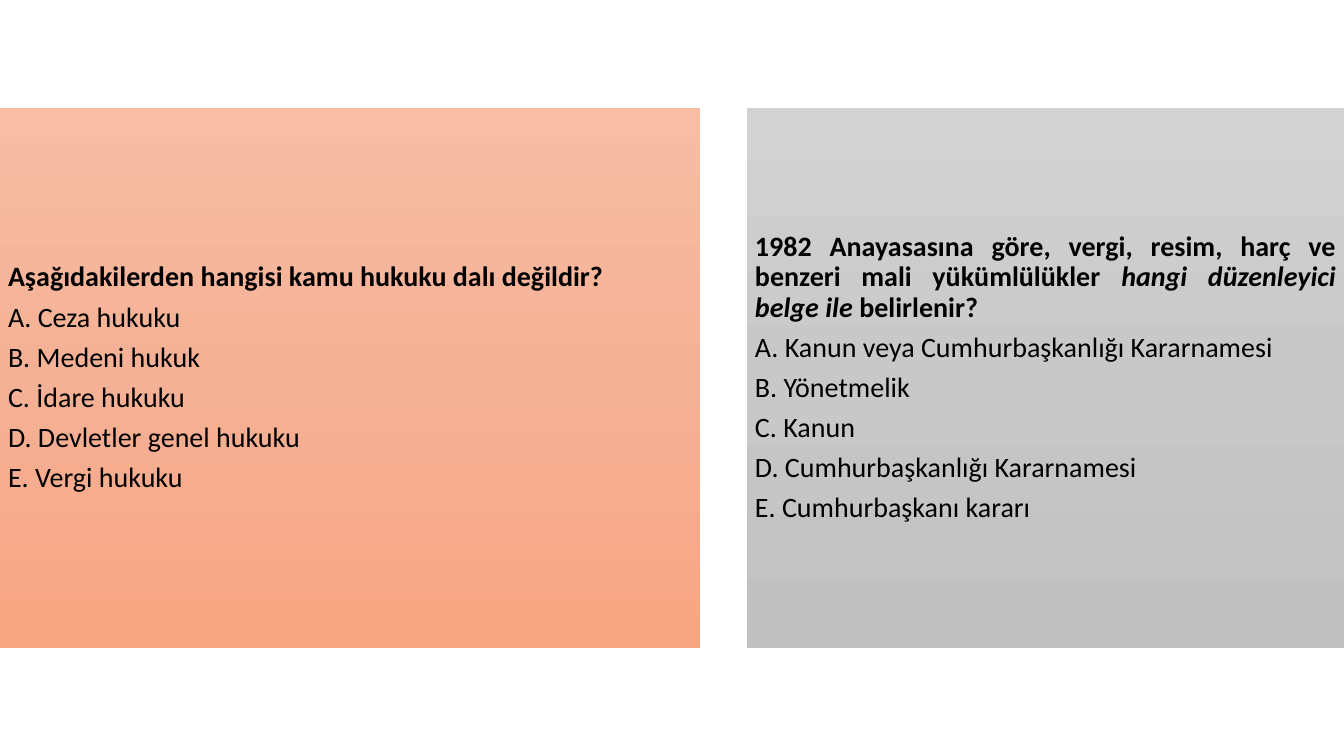
from copy import deepcopy

from pptx import Presentation
from pptx.dml.color import RGBColor
from pptx.enum.shapes import MSO_SHAPE as Shape
from pptx.enum.text import MSO_ANCHOR as Anchor, PP_ALIGN as Align
from pptx.util import Pt

EMU_PER_PX = 914400 / 100.8
WIDTH, HEIGHT = 1344, 756
PANEL_TOP, PANEL_HEIGHT = 108, 540

COLOURS = {
    "text": "000000",
    "orange": ["F7BDA5", "F5B196", "F8A582"],
    "grey": ["D2D2D2", "C8C8C8", "C0C0C0"],
}

# Each question: left, width, gradient, question runs (text, italic), answers
QUESTIONS = [
    (0, 700, "orange",
     [("Aşağıdakilerden hangisi kamu hukuku dalı değildir?", False)],
     ["Ceza hukuku", "Medeni hukuk", "İdare hukuku",
      "Devletler genel hukuku", "Vergi hukuku"]),
    (747, 597, "grey",
     [("1982 Anayasasına göre, vergi, resim, harç ve benzeri mali yükümlülükler ", False),
      ("hangi düzenleyici belge ile", True),
      (" belirlenir?", False)],
     ["Kanun veya Cumhurbaşkanlığı Kararnamesi", "Yönetmelik", "Kanun",
      "Cumhurbaşkanlığı Kararnamesi", "Cumhurbaşkanı kararı"]),
]


def px(length):
    return round(length * EMU_PER_PX)


def apply(target, values):
    for name, value in values.items():
        setattr(target, name, value)


class QuizSlide:
    FONT = {"name": "Calibri", "size": Pt(20)}
    PARAGRAPH = {"alignment": Align.JUSTIFY, "line_spacing": 0.9, "space_after": Pt(7)}
    FRAME = {"word_wrap": True, "vertical_anchor": Anchor.MIDDLE}
    FRAME.update({f"margin_{side}": px(8) for side in ("left", "top", "right", "bottom")})

    def __init__(self, deck):
        self.slide = deck.slides.add_slide(deck.slide_layouts[6])

    def panel(self, left, width, gradient):
        panel = self.slide.shapes.add_shape(
            Shape.RECTANGLE, px(left), px(PANEL_TOP), px(width), px(PANEL_HEIGHT))
        panel.shadow.inherit = False
        panel.line.fill.background()
        self.fill_gradient(panel, COLOURS[gradient])
        apply(panel.text_frame, self.FRAME)
        return panel.text_frame

    def fill_gradient(self, panel, colours):
        """Fill from top to bottom with three evenly spaced colours."""
        panel.fill.gradient()
        panel.fill.gradient_angle = 270
        first_stop = panel._element.spPr.xpath(".//a:gs")[0]
        first_stop.addnext(deepcopy(first_stop))
        for index, (stop, colour) in enumerate(zip(panel.fill.gradient_stops, colours)):
            stop.position = index / 2
            stop.color.rgb = RGBColor.from_string(colour)

    def paragraph(self, paragraph, runs, bold=False):
        apply(paragraph, self.PARAGRAPH)
        for text, italic in runs:
            run = paragraph.add_run()
            run.text = text
            apply(run.font, {**self.FONT, "bold": bold, "italic": italic})
            run.font.color.rgb = RGBColor.from_string(COLOURS["text"])

    def question(self, left, width, gradient, wording, answers):
        frame = self.panel(left, width, gradient)
        self.paragraph(frame.paragraphs[0], wording, bold=True)
        for letter, answer in zip("ABCDE", answers):
            self.paragraph(frame.add_paragraph(), [(f"{letter}. {answer}", False)])


def main():
    deck = Presentation()
    apply(deck, {"slide_width": px(WIDTH), "slide_height": px(HEIGHT)})
    quiz = QuizSlide(deck)
    for question in QUESTIONS:
        quiz.question(*question)
    deck.save("out.pptx")


if __name__ == "__main__":
    main()
